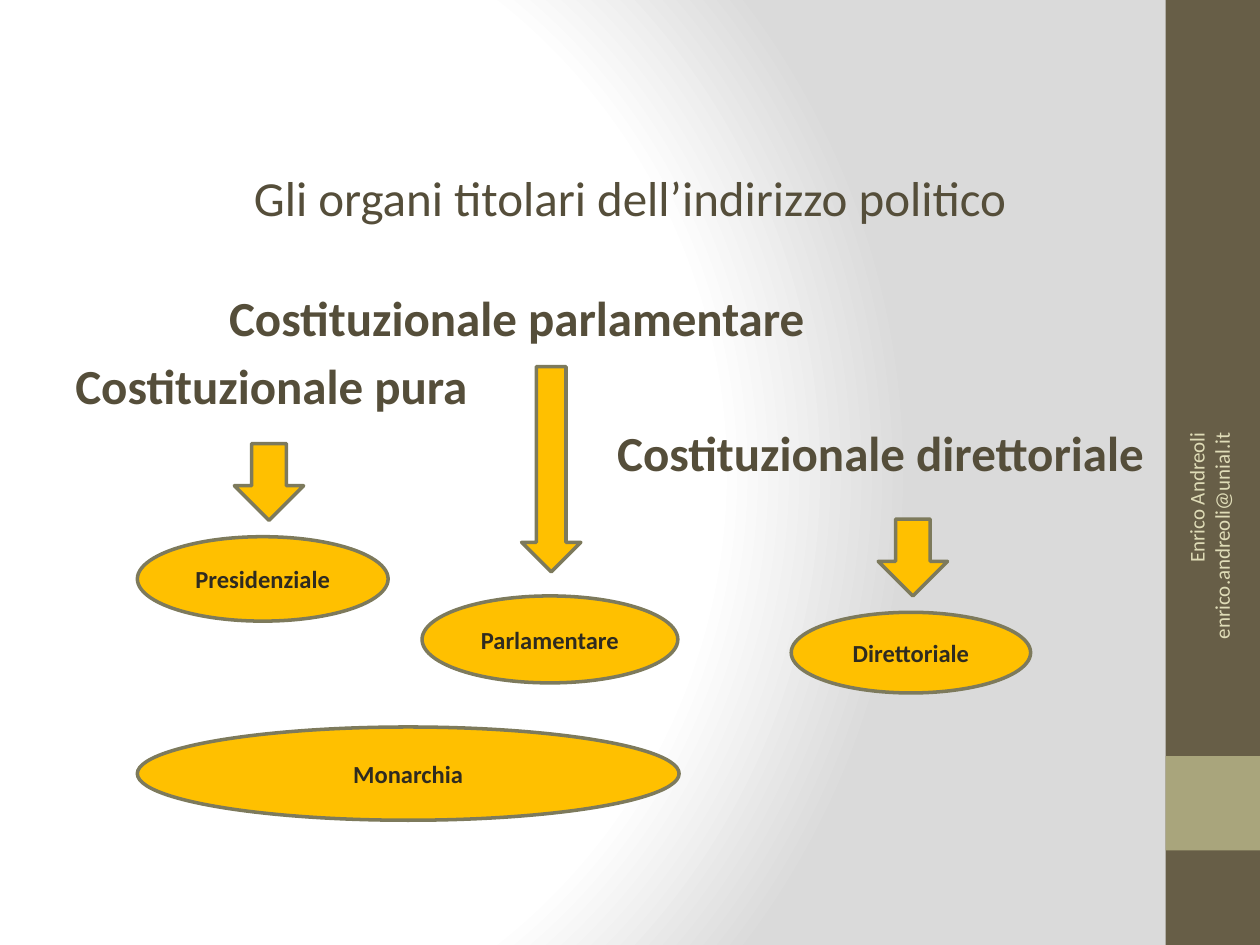
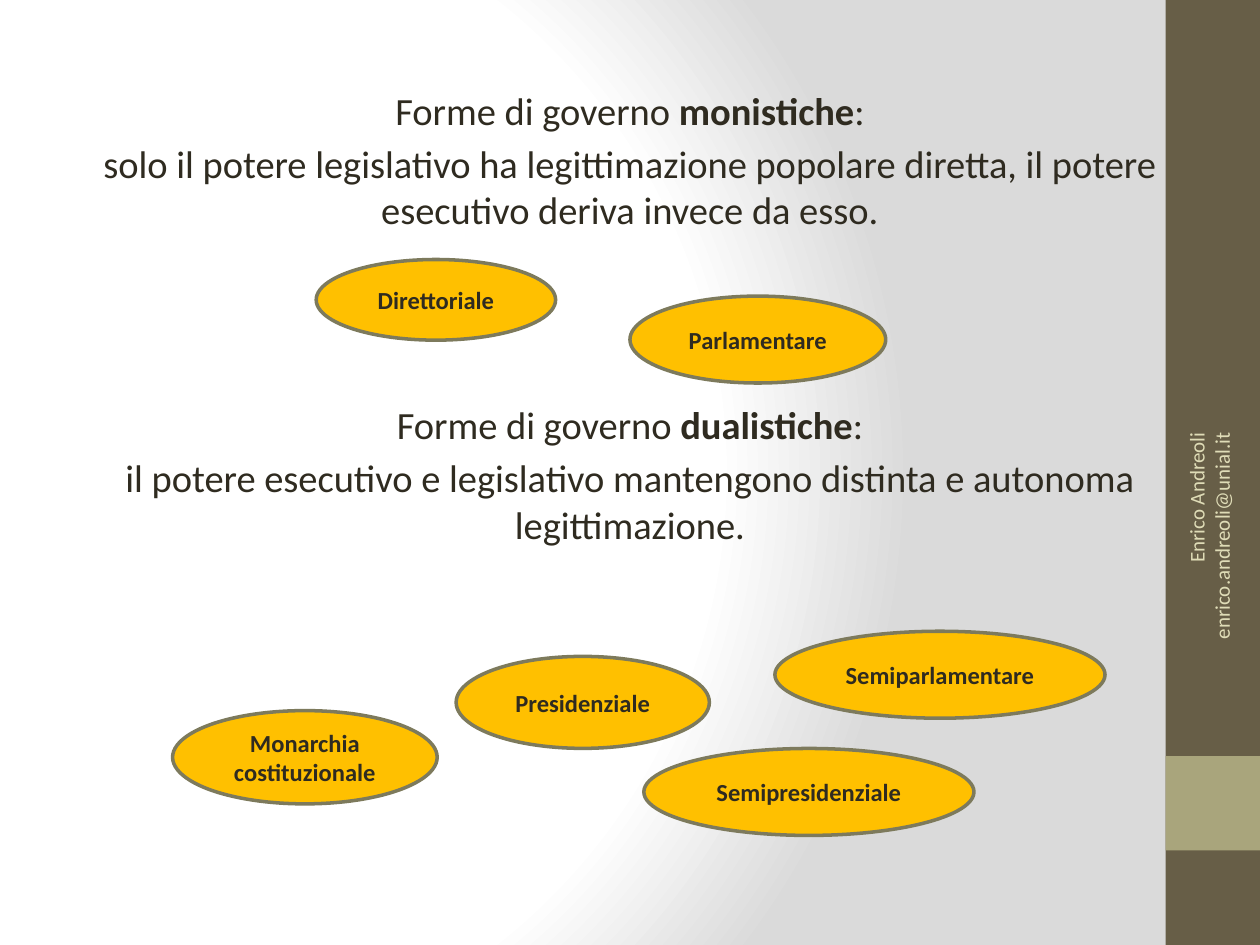
from lxml import etree
from pptx import Presentation
from pptx import util as u
from pptx.dml.color import RGBColor
from pptx.enum import shapes, text
from pptx.oxml import ns, parse_xml

COLUMNS, ROWS = 100, 75
FONT = "Calibri"
INK = RGBColor(0x2F, 0x2B, 0x20)
HEADING = RGBColor(0x55, 0x4E, 0x3A)
BAND = RGBColor(0x67, 0x5E, 0x47)
BAND_ACCENT = RGBColor(0xA9, 0xA5, 0x7C)
FOOTER = RGBColor(0xDF, 0xDC, 0xB7)
GOLD = RGBColor(0xFF, 0xC0, 0x00)
OUTLINE = RGBColor(0x7D, 0x7A, 0x5C)
WHITE = RGBColor(0xFF, 0xFF, 0xFF)
GREY = RGBColor(0xDA, 0xDA, 0xDA)

BACKGROUND_STOPS = ((0, WHITE), (75, WHITE), (100, GREY))
BACKGROUND_FOCUS = {"l": 20, "t": 50, "r": 100, "b": 50}
ALIGN = text.PP_ALIGN


class Deck:
    """Holds the style and the current slide; lengths are grid columns and rows."""

    def __init__(self):
        self.show = Presentation()
        self.show.slide_width = u.Inches(10)
        self.show.slide_height = u.Inches(7.5)
        self.column = self.show.slide_width / COLUMNS
        self.row = self.show.slide_height / ROWS
        self.slide = None

    def place(self, left, top, width, height):
        return (u.Emu(round(left * self.column)), u.Emu(round(top * self.row)),
                u.Emu(round(width * self.column)), u.Emu(round(height * self.row)))

    def new_slide(self):
        self.slide = self.show.slides.add_slide(self.show.slide_layouts[6])
        self.background()
        self.shape(shapes.MSO_SHAPE.RECTANGLE, (92.5, 0, 7.5, ROWS), BAND)
        self.shape(shapes.MSO_SHAPE.RECTANGLE, (92.5, 60, 7.5, 7.5), BAND_ACCENT)
        self.footer()

    def background(self):
        """Fill the slide with a circular gradient from white to grey."""
        self.slide.background.fill.gradient()
        gradient = self.slide.element.find(".//" + ns.qn("a:gradFill"))
        stops = "".join(
            f'<a:gs pos="{share * 1000}"><a:srgbClr val="{colour}"/></a:gs>'
            for share, colour in BACKGROUND_STOPS)
        circular = parse_xml(
            f'<a:gradFill {ns.nsdecls("a")} rotWithShape="1"><a:gsLst>{stops}</a:gsLst>'
            '<a:path path="circle"/></a:gradFill>')
        focus = etree.SubElement(circular.find(ns.qn("a:path")), ns.qn("a:fillToRect"))
        for side, share in BACKGROUND_FOCUS.items():
            focus.set(side, str(share * 1000))
        gradient.getparent().replace(gradient, circular)

    def shape(self, preset, box, fill, outlined=False):
        shape = self.slide.shapes.add_shape(preset, *self.place(*box))
        shape.shadow.inherit = False
        shape.fill.solid()
        shape.fill.fore_color.rgb = fill
        if outlined:
            shape.line.color.rgb = OUTLINE
            shape.line.width = u.Pt(2)
        else:
            shape.line.fill.background()
        return shape

    def style(self, paragraph, size, colour, align, bold=None):
        paragraph.alignment = align
        font = paragraph.font
        font.name, font.size, font.bold = FONT, u.Pt(size), bold
        font.color.rgb = colour

    def form(self, name, *box):
        """Draw the oval that names a form of government."""
        oval = self.shape(shapes.MSO_SHAPE.OVAL, box, GOLD, outlined=True)
        frame = oval.text_frame
        frame.text = name
        frame.vertical_anchor = text.MSO_ANCHOR.MIDDLE
        self.style(frame.paragraphs[0], 14, INK, ALIGN.CENTER, True)

    def arrow(self, *box):
        self.shape(shapes.MSO_SHAPE.DOWN_ARROW, box, GOLD, outlined=True)

    def text_box(self, *box):
        area = self.slide.shapes.add_textbox(*self.place(*box))
        area.text_frame.word_wrap = True
        return area

    def footer(self):
        area = self.text_box(83, 44.3, 25.9, 4)
        area.rotation = 270
        frame = area.text_frame
        frame.vertical_anchor = text.MSO_ANCHOR.MIDDLE
        frame.text = "Enrico Andreoli enrico.andreoli@unial.it"
        self.style(frame.paragraphs[0], 12, FOOTER, ALIGN.RIGHT)

    def paragraph(self, frame, parts, size, colour, gap=0, indent=None):
        """Add one paragraph of (words, bold) parts; indent in columns means left-aligned."""
        first = frame.paragraphs[0]
        line = frame.add_paragraph() if first.runs else first
        self.style(line, size, colour, ALIGN.CENTER if indent is None else ALIGN.LEFT)
        line.space_before = u.Pt(gap)
        if indent:
            line._p.get_or_add_pPr().set("marL", str(round(indent * self.column)))
        for words, bold in parts:
            run = line.add_run()
            run.text = words
            if bold:
                run.font.bold = True


def policy_organs(deck):
    deck.new_slide()
    frame = deck.text_box(5, 12.8, 90, 54).text_frame
    deck.paragraph(frame, [("Gli organi titolari dell’indirizzo politico", False)], 28, HEADING)
    for heading, gap, indent in (("parlamentare", 35, 12.2),
                                 ("pura", 5, 0),
                                 ("direttoriale", 5, 43)):
        deck.paragraph(frame, [(f"Costituzionale {heading}", True)], 28, HEADING, gap, indent)

    deck.arrow(18.6, 35.2, 5.5, 6.1)
    deck.arrow(41.4, 29.1, 4.7, 16.3)
    deck.arrow(69.7, 41.2, 5.5, 6.1)
    deck.form("Presidenziale", 10.9, 42.6, 19.9, 6.7)
    deck.form("Parlamentare", 33.5, 47.3, 20.3, 6.9)
    deck.form("Monarchia", 10.9, 57.7, 43, 7.4)
    deck.form("Direttoriale", 62.8, 48.6, 19, 6.4)


def monist_and_dualist(deck):
    deck.new_slide()
    frame = deck.text_box(5, 6.4, 90, 60.6).text_frame
    for kind, meaning, gap in (
            ("monistiche", "solo il potere legislativo ha legittimazione popolare diretta, "
                           "il potere esecutivo deriva invece da esso.", 0),
            ("dualistiche", "il potere esecutivo e legislativo mantengono distinta e "
                            "autonoma legittimazione.", 96.5)):
        heading = [("Forme di governo ", False), (kind, True), (":", False)]
        deck.paragraph(frame, heading, 22, INK, gap)
        deck.paragraph(frame, [(meaning, False)], 22, INK, 4)

    deck.form("Direttoriale", 25.1, 20.6, 19, 6.4)
    deck.form("Parlamentare", 50, 23.5, 20.3, 6.9)
    deck.form("Semipresidenziale", 51.1, 59.4, 26.2, 6.9)
    deck.form("Monarchia costituzionale", 13.7, 56.4, 21, 7.4)
    deck.form("Presidenziale", 36.2, 52.1, 20.1, 7.3)
    deck.form("Semiparlamentare", 61.5, 50.1, 26.2, 6.9)


def main():
    deck = Deck()
    policy_organs(deck)
    monist_and_dualist(deck)
    deck.show.save("out.pptx")


if __name__ == "__main__":
    main()
